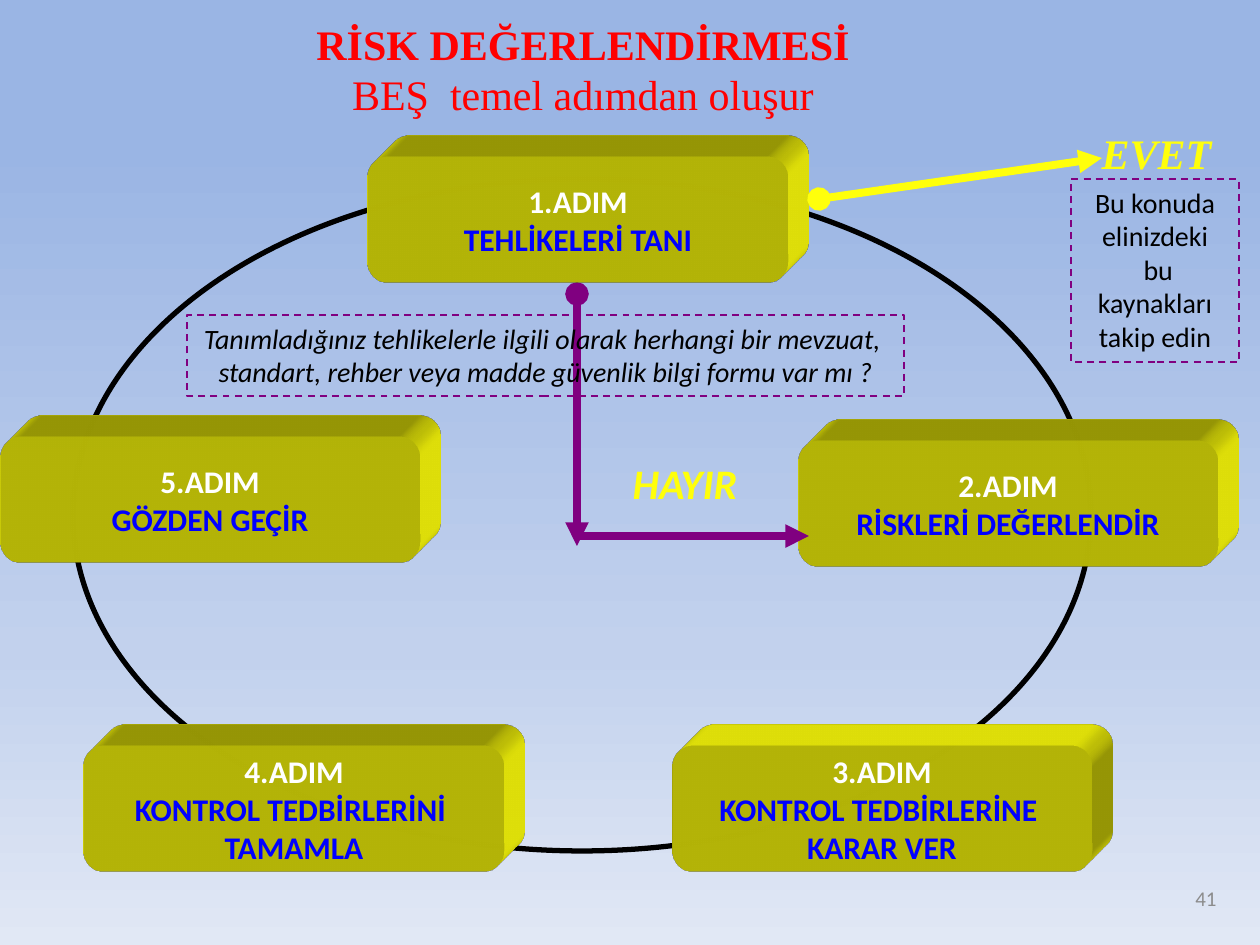
from copy import deepcopy
from dataclasses import dataclass

from lxml import etree
from pptx import Presentation
from pptx.dml.color import RGBColor
from pptx.enum.dml import MSO_LINE
from pptx.enum.shapes import MSO_CONNECTOR, MSO_SHAPE
from pptx.enum.text import MSO_ANCHOR, PP_ALIGN
from pptx.oxml.ns import qn
from pptx.util import Pt

PX = 914400 / 126
CENTER, RIGHT = PP_ALIGN.CENTER, PP_ALIGN.RIGHT
TOP, MIDDLE = MSO_ANCHOR.TOP, MSO_ANCHOR.MIDDLE
DASH = MSO_LINE.DASH
STRAIGHT = MSO_CONNECTOR.STRAIGHT
ROUNDED, OVAL, RECTANGLE = MSO_SHAPE.ROUNDED_RECTANGLE, MSO_SHAPE.OVAL, MSO_SHAPE.RECTANGLE

RED = RGBColor(0xFF, 0x00, 0x00)
BLUE = RGBColor(0x00, 0x00, 0xFF)
BLACK = RGBColor(0x00, 0x00, 0x00)
WHITE = RGBColor(0xFF, 0xFF, 0xFF)
GREY = RGBColor(0x8C, 0x8C, 0x8C)
PURPLE = RGBColor(0x80, 0x00, 0x80)
YELLOW = RGBColor(0xFF, 0xFF, 0x0B)
SKY = RGBColor(0x9A, 0xB5, 0xE4)
MIST = RGBColor(0xC2, 0xD1, 0xED)
PALE = RGBColor(0xE1, 0xE8, 0xF5)

STEP_WIDTH, STEP_HEIGHT = 420, 126
EXTRUSION = 430200


@dataclass(frozen=True)
class Step:
    left: int
    top: int
    lines: tuple[str, ...]
    light: str = "b"


@dataclass(frozen=True)
class Label:
    box: tuple[int, int, int, int]
    lines: tuple[str, ...]
    size: int
    color: RGBColor
    font: str = "Calibri"
    bold: bool = False
    italic: bool = False
    wrap: bool = False
    framed: bool = False
    align: PP_ALIGN = CENTER
    anchor: MSO_ANCHOR = TOP


@dataclass(frozen=True)
class Arrow:
    start: tuple[int, int]
    end: tuple[int, int]
    color: RGBColor
    round_start: bool = True


NUMBER = Label((914, 882, 315, 32), ("41",), 12, GREY, wrap=True, align=RIGHT, anchor=MIDDLE)
DOWN_ARROW = Arrow((577, 294), (577, 546), PURPLE)
STEPS = [
    Step(368, 157, ("1.ADIM", "TEHLİKELERİ TANI")),
    Step(798, 441, ("2.ADIM", "RİSKLERİ DEĞERLENDİR")),
    Step(84, 746, ("4.ADIM", "KONTROL TEDBİRLERİNİ ", "TAMAMLA")),
    Step(672, 746, ("3.ADIM", "KONTROL TEDBİRLERİNE ", "KARAR VER"), light="r"),
    Step(0, 437, ("5.ADIM", "GÖZDEN GEÇİR")),
]
SOURCES = Label((1071, 179, 168, 183), ("Bu konuda elinizdeki", " bu kaynakları takip edin"),
                16, BLACK, wrap=True, framed=True)
YES_ARROW = Arrow((819, 199), (1102, 158), YELLOW)
YES = Label((1089, 121, 135, 63), ("EVET",), 24, YELLOW, "Times New Roman", bold=True, italic=True)
NO_ARROW = Arrow((577, 536), (809, 536), PURPLE, round_start=False)
NO = Label((607, 451, 156, 63), ("HAYIR",), 24, YELLOW, bold=True, italic=True)
QUESTION = Label((187, 315, 717, 81),
                 ("Tanımladığınız tehlikelerle ilgili olarak herhangi bir mevzuat, ",
                  "standart, rehber veya madde güvenlik bilgi formu var mı ?"),
                 16, BLACK, italic=True, framed=True)


def emu(*lengths: int) -> list[int]:
    return [round(length * PX) for length in lengths]


def write_lines(shape, lines, size, colors, font, bold=False, italic=False, align=CENTER) -> None:
    frame = shape.text_frame
    frame.text = "\n".join(lines)
    for paragraph, color in zip(frame.paragraphs, colors):
        paragraph.alignment = align
        paragraph.font.name = font
        paragraph.font.size = Pt(size)
        paragraph.font.bold = bold
        paragraph.font.italic = italic
        paragraph.font.color.rgb = color


def set_background(slide) -> None:
    fill = slide.background.fill
    fill.gradient()
    fill.gradient_angle = 270
    first, last = fill.gradient_stops
    first.color.rgb, first.position = SKY, 0.15
    last.color.rgb, last.position = MIST, 0.69
    stops = next(slide.element.iter(qn("a:gsLst")))
    stops.append(deepcopy(stops[-1]))
    final = fill.gradient_stops[2]
    final.color.rgb, final.position = PALE, 1


def add_title(slide) -> None:
    title = slide.shapes.title
    title.left, title.top, title.width, title.height = emu(301, 12, 564, 115)
    title.text_frame.word_wrap = False
    title.text_frame.vertical_anchor = TOP
    write_lines(title, ("RİSK DEĞERLENDİRMESİ", "BEŞ  temel adımdan oluşur"),
                24, (RED, RED), "Times New Roman")
    title.text_frame.paragraphs[0].font.bold = True


def add_arrow(slide, arrow: Arrow) -> None:
    connector = slide.shapes.add_connector(STRAIGHT, *emu(*arrow.start, *arrow.end))
    connector.line.color.rgb = arrow.color
    connector.line.width = Pt(4.5)
    line = connector.line._get_or_add_ln()
    if arrow.round_start:
        etree.SubElement(line, qn("a:headEnd"), type="oval")
    etree.SubElement(line, qn("a:tailEnd"), type="triangle")
    etree.SubElement(connector._element.spPr, qn("a:effectLst"))


def add_cycle(slide) -> None:
    cycle = slide.shapes.add_shape(OVAL, *emu(73, 179, 1018, 672))
    cycle.shadow.inherit = False
    cycle.fill.background()
    cycle.line.color.rgb = BLACK
    cycle.line.width = Pt(3)


def extrude(shape, light: str) -> None:
    properties = shape._element.spPr
    scene = etree.SubElement(properties, qn("a:scene3d"))
    etree.SubElement(scene, qn("a:camera"), prst="legacyObliqueTopRight")
    etree.SubElement(scene, qn("a:lightRig"), rig="legacyFlat3", dir=light)
    solid = etree.SubElement(properties, qn("a:sp3d"), extrusionH=str(EXTRUSION),
                             prstMaterial="legacyMatte")
    color = etree.SubElement(solid, qn("a:extrusionClr"))
    etree.SubElement(color, qn("a:srgbClr"), val=str(YELLOW))


def add_step(slide, step: Step) -> None:
    block = slide.shapes.add_shape(ROUNDED, *emu(step.left, step.top, STEP_WIDTH, STEP_HEIGHT))
    block.shadow.inherit = False
    block.fill.solid()
    block.fill.fore_color.rgb = YELLOW
    block.line.fill.background()
    extrude(block, step.light)
    block.text_frame.word_wrap = False
    block.text_frame.vertical_anchor = MIDDLE
    write_lines(block, step.lines, 18, (WHITE, BLUE, BLUE), "Calibri", bold=True)


def add_label(slide, label: Label) -> None:
    if label.framed:
        shape = slide.shapes.add_shape(RECTANGLE, *emu(*label.box))
        shape.shadow.inherit = False
        shape.fill.background()
        shape.line.color.rgb = PURPLE
        shape.line.width = Pt(1)
        shape.line.dash_style = DASH
    else:
        shape = slide.shapes.add_textbox(*emu(*label.box))
    shape.text_frame.word_wrap = label.wrap
    shape.text_frame.vertical_anchor = label.anchor
    write_lines(shape, label.lines, label.size, [label.color] * len(label.lines),
                label.font, label.bold, label.italic, label.align)


def main() -> None:
    presentation = Presentation()
    presentation.slide_width, presentation.slide_height = emu(1260, 945)
    slide = presentation.slides.add_slide(presentation.slide_layouts[5])
    set_background(slide)
    add_title(slide)
    add_label(slide, NUMBER)
    add_arrow(slide, DOWN_ARROW)
    add_cycle(slide)
    for step in STEPS:
        add_step(slide, step)
    add_label(slide, SOURCES)
    add_arrow(slide, YES_ARROW)
    add_label(slide, YES)
    add_arrow(slide, NO_ARROW)
    add_label(slide, NO)
    add_label(slide, QUESTION)
    presentation.save("out.pptx")


if __name__ == "__main__":
    main()
